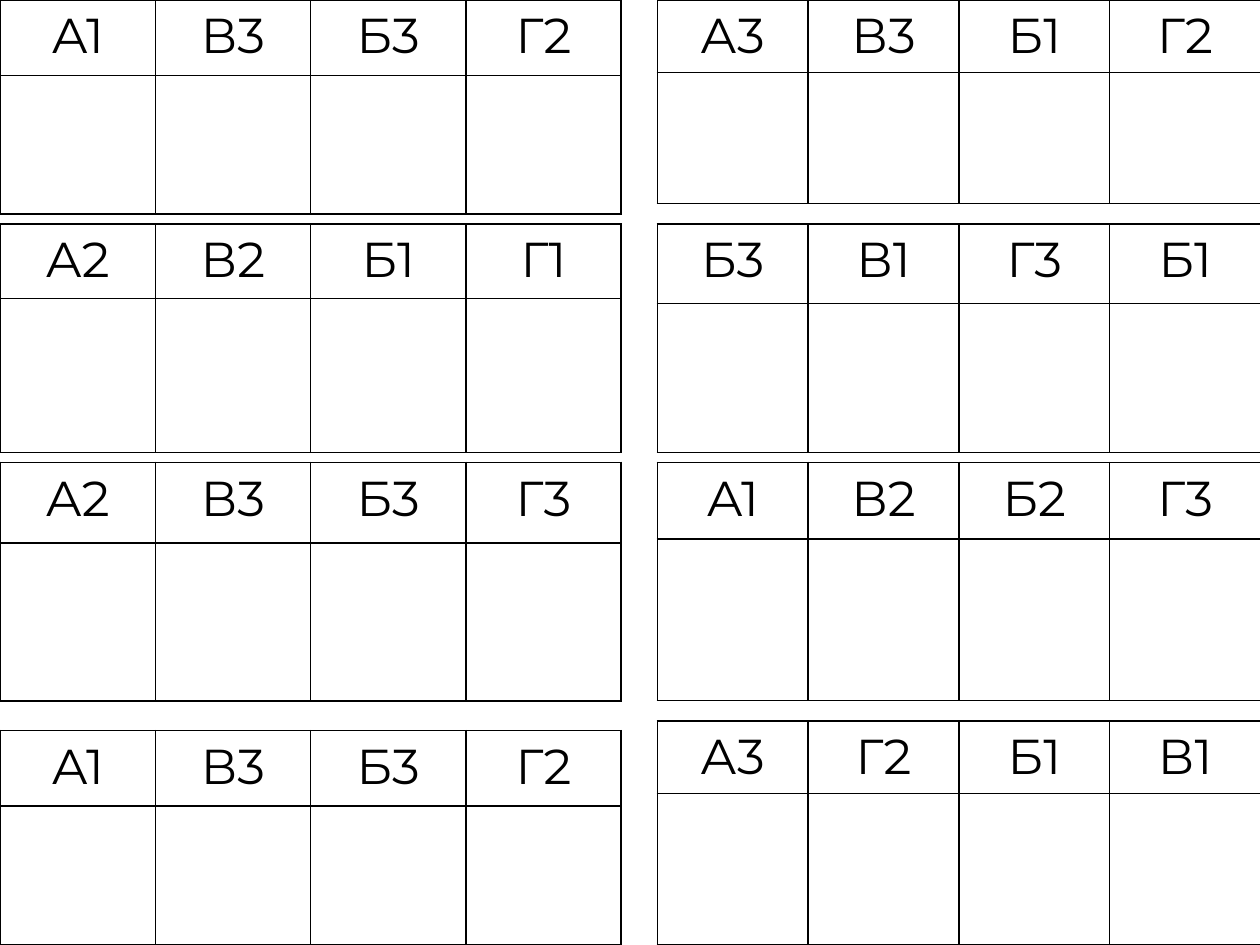
import pptx
import pptx.dml.color
import pptx.enum.text
import pptx.oxml
import pptx.oxml.ns
import pptx.util

Cm = pptx.util.Cm
Pt = pptx.util.Pt
INK = "000000"


def color(code):
    return pptx.dml.color.RGBColor.from_string(code)


def frame(cell):
    """Draw a 1 pt line on all four sides of a cell."""
    props = cell._tc.get_or_add_tcPr()
    for side in ("lnL", "lnR", "lnT", "lnB"):
        props.append(pptx.oxml.parse_xml(
            f'<a:{side} {pptx.oxml.ns.nsdecls("a")} w="{Pt(1)}">'
            f'<a:solidFill><a:srgbClr val="{INK}"/></a:solidFill>'
            f'</a:{side}>'))


deck = pptx.Presentation()
deck.slide_width = Cm(25.4)
deck.slide_height = Cm(19.05)
slide = deck.slides.add_slide(deck.slide_layouts[6])

# Each side: left edge, column width, then cards of
# (top, header height, body height, labels)
sides = [
    (0, 3.13, [
        (0, 1.52, 2.79, "А1 В3 Б3 Г2"),
        (4.52, 1.5, 3.1, "А2 В2 Б1 Г1"),
        (9.32, 1.63, 3.18, "А2 В3 Б3 Г3"),
        (14.73, 1.52, 2.79, "А1 В3 Б3 Г2"),
    ]),
    (13.25, 3.04, [
        (0, 1.46, 2.64, "А3 В3 Б1 Г2"),
        (4.52, 1.6, 3, "Б3 В1 Г3 Б1"),
        (9.32, 1.55, 3.25, "А1 В2 Б2 Г3"),
        (14.53, 1.47, 3.05, "А3 Г2 Б1 В1"),
    ]),
]

for left, width, cards in sides:
    for top, head, body, labels in cards:
        names = labels.split()
        grid = slide.shapes.add_table(
            2, len(names), Cm(left), Cm(top),
            Cm(width * len(names)), Cm(head + body)).table
        grid.first_row = False
        grid.horz_banding = False
        grid.rows[0].height = Cm(head)
        grid.rows[1].height = Cm(body)
        for col in grid.columns:
            col.width = Cm(width)
        for cell in grid.iter_cells():
            frame(cell)
            cell.fill.background()
        for place, name in enumerate(names):
            para = grid.cell(0, place).text_frame.paragraphs[0]
            para.alignment = pptx.enum.text.PP_ALIGN.CENTER
            run = para.add_run()
            run.text = name
            run.font.name = "Montserrat"
            run.font.size = Pt(28)
            run.font.color.rgb = color(INK)

deck.save("out.pptx")
